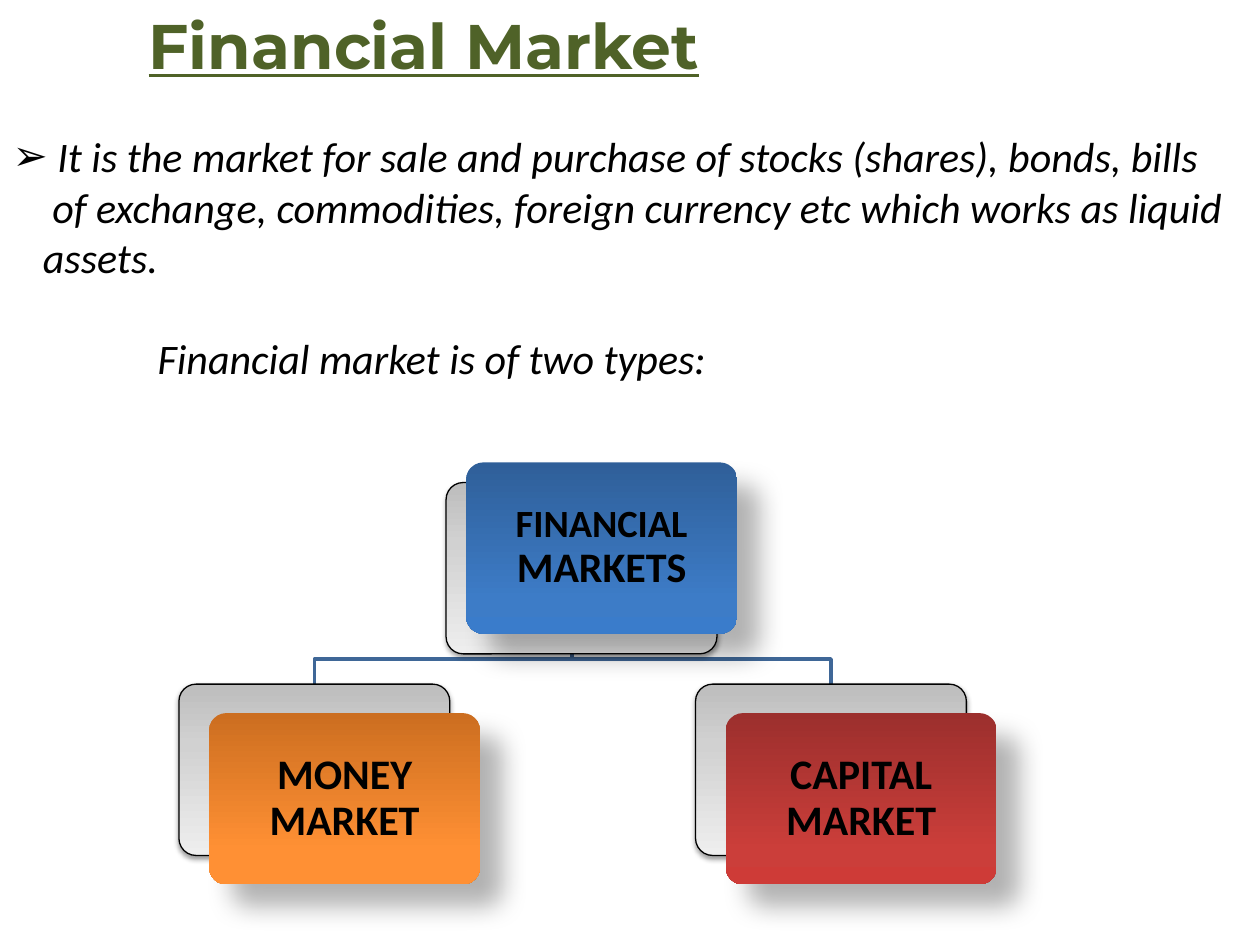
from pptx import Presentation
from pptx.dml.color import RGBColor
from pptx.enum.shapes import MSO_SHAPE
from pptx.enum.text import MSO_ANCHOR, MSO_AUTO_SIZE, PP_ALIGN
from pptx.oxml import parse_xml
from pptx.oxml.ns import nsdecls
from pptx.util import Inches, Pt

ROUND_RECT = MSO_SHAPE.ROUNDED_RECTANGLE
TOP, MIDDLE = MSO_ANCHOR.TOP, MSO_ANCHOR.MIDDLE
LEFT, CENTER = PP_ALIGN.LEFT, PP_ALIGN.CENTER
NO_AUTOFIT = MSO_AUTO_SIZE.NONE

BLACK = RGBColor(0x00, 0x00, 0x00)
OLIVE = RGBColor(0x4F, 0x62, 0x28)
LINK = RGBColor(0x3F, 0x67, 0x97)


def ramp(*colors):
    """Turn hex strings into a tuple of colours."""
    return tuple(RGBColor.from_string(c) for c in colors)


GREY = ramp("BDBDBD", "D1D1D1", "EEEEEE")
BLUE = ramp("2F5F99", "3D7CC7", "3A7CCB")
ORANGE = ramp("CC6E20", "FF9034", "FF9136")
RED = ramp("9C2F2D", "CB3E3A", "CE3B37")

CARD_W, CARD_H = 2.15, 1.36
ROOT_X, ROOT_Y = 3.54, 3.83
CHILD_X, CHILD_GAP, CHILD_Y = 1.42, 4.1, 5.43
TRUNK_X, TRUNK_Y, BRANCH_Y = 4.54, 4.8, 5.23


def place(s, x, y, w, h):
    """Move and size a shape in inches."""
    s.left, s.top, s.width, s.height = map(Inches, (x, y, w, h))


def add_run(p, text, size, font="Calibri", color=BLACK, **style):
    """Append a formatted run to a paragraph."""
    r = p.add_run()
    r.text = text
    r.font.size, r.font.name = Pt(size), font
    r.font.color.rgb = color
    for name, value in style.items():
        setattr(r.font, name, value)


def set_bullet(p, margin, indent, char=None):
    """Set the indents and bullet of a paragraph."""
    pPr = p._p.get_or_add_pPr()
    pPr.set("marL", str(Inches(margin)))
    pPr.set("indent", str(Inches(indent)))
    tag = f'<a:buChar {nsdecls("a")} char="{char}"/>' if char else f'<a:buNone {nsdecls("a")}/>'
    pPr.append(parse_xml(tag))


def set_gradient(s, colors, middle):
    """Fill a shape with three colours running upwards."""
    s.fill.gradient()
    s.fill.gradient_angle = 270
    stops = "".join(f'<a:gs {nsdecls("a")} pos="{pos * 1000}"><a:srgbClr val="{c}"/></a:gs>'
                    for pos, c in zip((0, middle, 100), colors))
    old = s.fill._fill._gradFill.gsLst
    old.getparent().replace(old, parse_xml(f'<a:gsLst {nsdecls("a")}>{stops}</a:gsLst>'))


def set_shadow(s, alpha, blur, dist, angle):
    """Give a shape a black outer shadow."""
    s.shadow.inherit = False
    s._element.spPr.find(".//{*}effectLst").append(parse_xml(
        f'<a:outerShdw {nsdecls("a")} blurRad="{Pt(blur)}" dist="{Pt(dist)}" '
        f'dir="{angle * 60000}" algn="ctr" rotWithShape="0"><a:srgbClr val="{BLACK}">'
        f'<a:alpha val="{alpha * 1000}"/></a:srgbClr></a:outerShdw>'))


def add_panel(slide, x, y, colors, middle, shadow):
    """Add one rounded panel with gradient and shadow."""
    s = slide.shapes.add_shape(ROUND_RECT, *map(Inches, (x, y, CARD_W, CARD_H)))
    s.adjustments[0] = 0.1
    set_gradient(s, colors, middle)
    s.line.fill.background()
    set_shadow(s, *shadow)
    return s


def add_card(slide, x, y, dx, dy, colors, words):
    """Add a grey back panel and a labelled front panel."""
    back = add_panel(slide, x, y, GREY, 35, (38, 3.1, 1.6, 90))
    back.line.color.rgb, back.line.width = BLACK, Pt(0.75)
    front = add_panel(slide, x + dx, y + dy, colors, 80, (30, 15, 18, 45))
    tf = front.text_frame
    tf.word_wrap, tf.vertical_anchor = True, MIDDLE
    tf.margin_left = tf.margin_right = tf.margin_top = tf.margin_bottom = Inches(0.14)
    p = tf.paragraphs[0]
    p.alignment, p.line_spacing = CENTER, 0.9
    for text, size in words:
        add_run(p, text, size, bold=True)


def add_branch(slide, x):
    """Draw the bent line from the root down to a child."""
    builder = slide.shapes.build_freeform(Inches(TRUNK_X), Inches(TRUNK_Y))
    bends = [(TRUNK_X, BRANCH_Y), (x, BRANCH_Y), (x, CHILD_Y)]
    builder.add_line_segments([(Inches(a), Inches(b)) for a, b in bends], close=False)
    s = builder.convert_to_shape()
    s.fill.background()
    s.line.color.rgb, s.line.width = LINK, Pt(2)
    s.shadow.inherit = False


def fill_title(s):
    """Write the slide title."""
    place(s, 1.08, 0, 8.92, 1.31)
    tf = s.text_frame
    tf.auto_size, tf.vertical_anchor = NO_AUTOFIT, TOP
    p = tf.paragraphs[0]
    p.alignment = LEFT
    add_run(p, "Financial Market", 36, "Montserrat", OLIVE, bold=True, underline=True)


def fill_body(s):
    """Write the definition and the lead-in to the diagram."""
    place(s, 0, 0.5, 10, 3.08)
    tf = s.text_frame
    tf.auto_size, tf.vertical_anchor = NO_AUTOFIT, MIDDLE
    p = tf.paragraphs[0]
    p.space_before = Pt(0)
    set_bullet(p, 0.24, -0.24, "➢")
    add_run(p, " It is the market for sale and purchase of stocks (shares), bonds, bills",
            24, italic=True)
    p.add_line_break()
    add_run(p, " of exchange, commodities, foreign currency etc which works as liquid assets.",
            24, italic=True)
    p = tf.add_paragraph()
    p.space_before = Pt(29)
    set_bullet(p, 1.15, 0)
    add_run(p, "Financial market is of two types:", 24, italic=True)


def main():
    """Build and save the slide."""
    prs = Presentation()
    prs.slide_width, prs.slide_height = Inches(10), Inches(7.5)
    slide = prs.slides.add_slide(prs.slide_layouts[1])
    fill_title(slide.shapes.title)
    fill_body(slide.placeholders[1])

    children = [(ORANGE, "MONEY MARKET"), (RED, "CAPITAL MARKET")]
    columns = [CHILD_X + i * CHILD_GAP for i in range(len(children))]
    for x in columns:
        add_branch(slide, x + CARD_W / 2)
    add_card(slide, ROOT_X, ROOT_Y, 0.16, -0.16, BLUE, [("FINANCIAL ", 22), ("MARKETS", 24)])
    for x, (colors, label) in zip(columns, children):
        add_card(slide, x, CHILD_Y, 0.24, 0.23, colors, [(label, 24)])
    prs.save("out.pptx")


if __name__ == "__main__":
    main()
